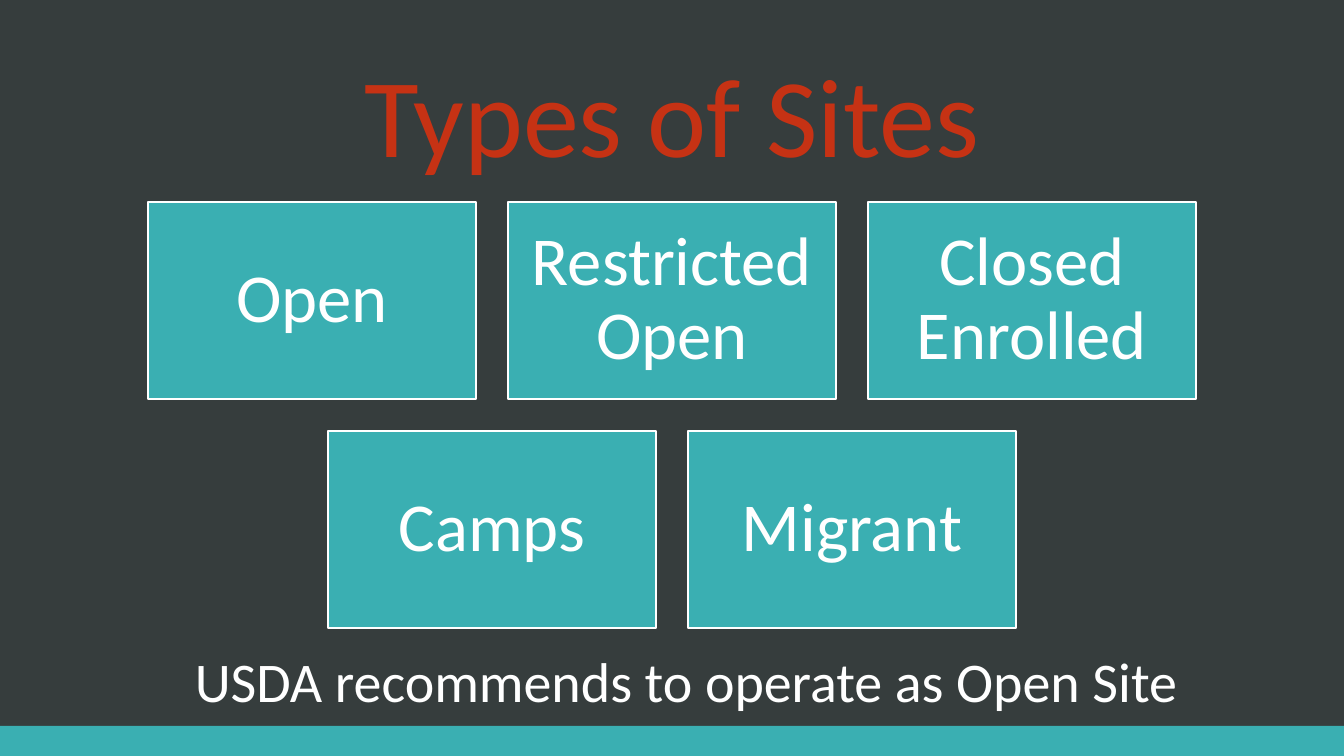
import pptx
import pptx.util
import pptx.dml.color
import pptx.enum.shapes
import pptx.enum.text

PX = 914400 / 100.8
SLIDE_WIDTH, SLIDE_HEIGHT = 1344, 756
COLORS = {
    "background": "363D3D",
    "teal": "3AAFB2",
    "title": "C63214",
    "white": "FFFFFF",
}


def add_rectangle(left, top, width, height):
    box = slide.shapes.add_shape(
        pptx.enum.shapes.MSO_SHAPE.RECTANGLE,
        *(round(length * PX) for length in (left, top, width, height)),
    )
    box.shadow.inherit = False
    box.fill.solid()
    box.fill.fore_color.rgb = pptx.dml.color.RGBColor.from_string(COLORS["teal"])
    box.line.fill.background()
    return box


def write_text(shape, text, size, color, anchor, line_spacing=None):
    frame = shape.text_frame
    frame.text = text
    frame.word_wrap = True
    frame.auto_size = pptx.enum.text.MSO_AUTO_SIZE.NONE
    frame.vertical_anchor = anchor
    para = frame.paragraphs[0]
    para.alignment = pptx.enum.text.PP_ALIGN.CENTER
    para.line_spacing = line_spacing
    span = para.runs[0]
    span.font.name = "Calibri"
    span.font.size = pptx.util.Pt(size)
    span.font.color.rgb = pptx.dml.color.RGBColor.from_string(COLORS[color])


# Deck and background
deck = pptx.Presentation()
deck.slide_width = round(SLIDE_WIDTH * PX)
deck.slide_height = round(SLIDE_HEIGHT * PX)
slide = deck.slides.add_slide(deck.slide_layouts[5])
slide.background.fill.solid()
slide.background.fill.fore_color.rgb = pptx.dml.color.RGBColor.from_string(
    COLORS["background"]
)

# Bottom band
add_rectangle(0, 726, SLIDE_WIDTH, 30)

# Title
title = slide.shapes.title
title.left, title.top = round(148 * PX), round(51 * PX)
title.width, title.height = round(1048 * PX), round(136 * PX)
write_text(title, "Types of Sites", 80, "title",
           pptx.enum.text.MSO_ANCHOR.BOTTOM, 0.9)

# Site types, each row centred on the slide
SITE_ROWS = [["Open", "Restricted Open", "Closed Enrolled"], ["Camps", "Migrant"]]
BOX_WIDTH, BOX_HEIGHT, GAP, INSET = 328, 197, 32, 20
for row, sites in enumerate(SITE_ROWS):
    row_width = len(sites) * (BOX_WIDTH + GAP) - GAP
    row_left = (SLIDE_WIDTH - row_width) // 2
    for column, site in enumerate(sites):
        box = add_rectangle(row_left + column * (BOX_WIDTH + GAP),
                            202 + row * (BOX_HEIGHT + GAP), BOX_WIDTH, BOX_HEIGHT)
        box.line.color.rgb = pptx.dml.color.RGBColor.from_string(COLORS["white"])
        box.line.width = pptx.util.Pt(1)
        frame = box.text_frame
        frame.margin_left = frame.margin_right = round(INSET * PX)
        frame.margin_top = frame.margin_bottom = round(INSET * PX)
        write_text(box, site, 49, "white", pptx.enum.text.MSO_ANCHOR.MIDDLE, 0.9)

# Recommendation
note = slide.shapes.add_textbox(
    *(round(length * PX) for length in (109, 642, 1154, 78))
)
write_text(note, "USDA recommends to operate as Open Site", 40, "white",
           pptx.enum.text.MSO_ANCHOR.TOP)

deck.save("out.pptx")
